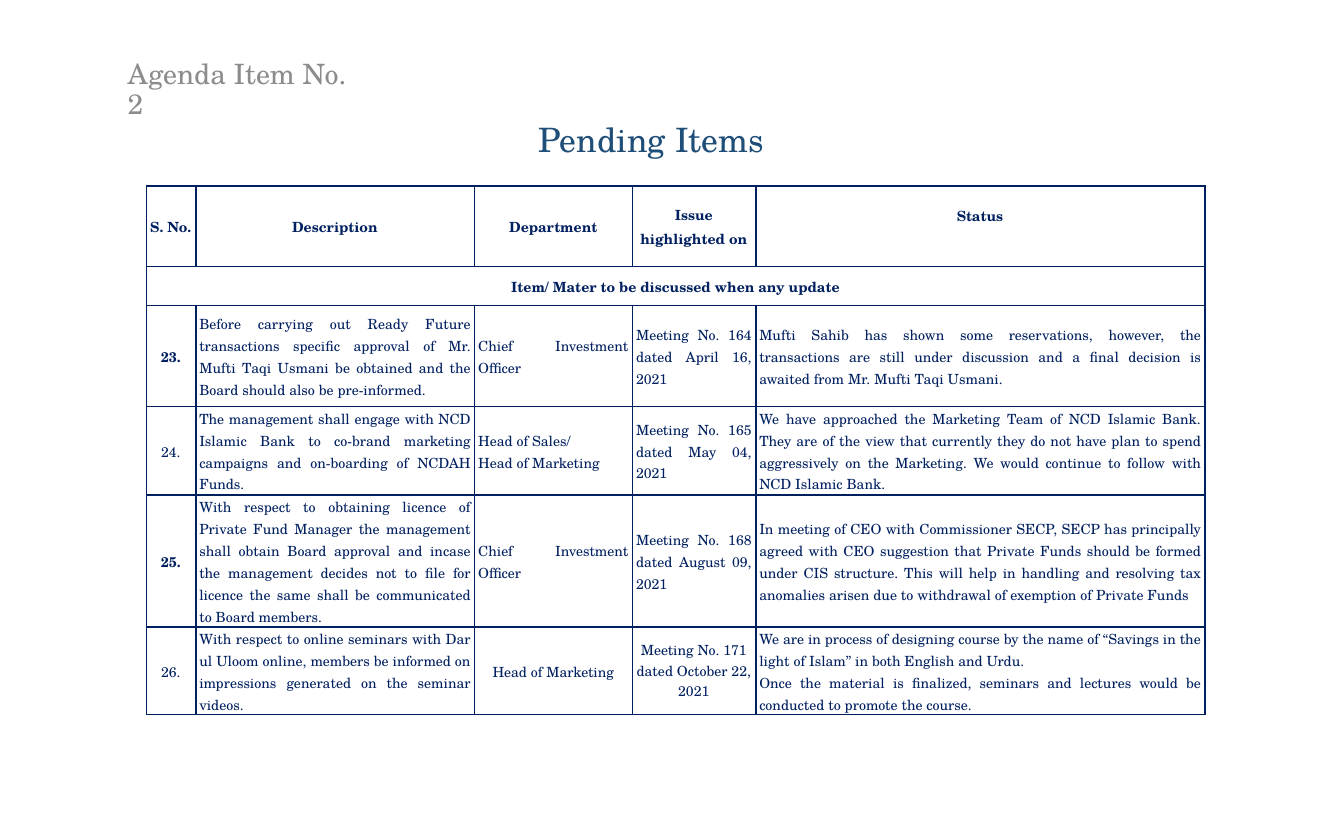
from dataclasses import dataclass

from lxml import etree
from pptx import Presentation
from pptx.dml.color import RGBColor
from pptx.enum.text import MSO_ANCHOR, PP_ALIGN
from pptx.oxml.ns import qn
from pptx.util import Inches, Pt

LEFT, CENTER, JUSTIFY = PP_ALIGN.LEFT, PP_ALIGN.CENTER, PP_ALIGN.JUSTIFY
TOP, MIDDLE = MSO_ANCHOR.TOP, MSO_ANCHOR.MIDDLE


@dataclass(frozen=True)
class Theme:
    font: str = "TeX Gyre Schola"
    agenda_color: str = "8C8C8C"
    title_color: str = "1F4E79"
    table_color: str = "002060"
    cell_fill: str = "FFFFFF"
    agenda_size: float = 18
    title_size: float = 21.6
    table_size: float = 9
    border_width: float = 1
    heading_spacing: float = 0.9
    cell_spacing: float = 1.07


COLUMN_WIDTHS = [0.44, 2.49, 1.41, 1.1, 4.01]
ROW_HEIGHTS = [0.72, 0.35, 0.9, 0.79, 1.18, 0.78]
HEADERS = ["S. No.", "Description", "Department", "Issue highlighted on", "Status"]
SECTION = "Item/ Mater to be discussed when any update"
ITEMS = [
    ["23.",
     "Before carrying out Ready Future transactions specific approval of Mr. Mufti Taqi "
     "Usmani be obtained and the Board should also be pre-informed.",
     "Chief Investment Officer",
     "Meeting No. 164 dated April 16, 2021",
     "Mufti Sahib has shown some reservations, however, the transactions are still under "
     "discussion and a final decision is awaited from Mr. Mufti Taqi Usmani."],
    ["24.",
     "The management shall engage with NCD Islamic Bank to co-brand marketing campaigns "
     "and on-boarding of NCDAH Funds.",
     "Head of Sales/\nHead of Marketing",
     "Meeting No. 165 dated May 04, 2021",
     "We have approached the Marketing Team of NCD Islamic Bank. They are of the view that "
     "currently they do not have plan to spend aggressively on the Marketing. We would "
     "continue to follow with NCD Islamic Bank."],
    ["25.",
     "With respect to obtaining licence of Private Fund Manager the management shall obtain "
     "Board approval and incase the management decides not to file for licence the same "
     "shall be communicated to Board members.",
     "Chief Investment Officer",
     "Meeting No. 168 dated August 09, 2021",
     "In meeting of CEO with Commissioner SECP, SECP has principally agreed with CEO "
     "suggestion that Private Funds should be formed under CIS structure. This will help in "
     "handling and resolving tax anomalies arisen due to withdrawal of exemption of Private "
     "Funds"],
    ["26.",
     "With respect to online seminars with Dar ul Uloom online, members be informed on "
     "impressions generated on the seminar videos.",
     "Head of Marketing",
     "Meeting No. 171 dated October 22, 2021",
     "We are in process of designing course by the name of “Savings in the light of Islam” "
     "in both English and Urdu.\nOnce the material is finalized, seminars and lectures would "
     "be conducted to promote the course."],
]
BOLD_NUMBERS = {"23.", "25."}


class PageBuilder:
    def __init__(self, page, theme):
        self.page = page
        self.theme = theme

    def format_text(self, frame, size, color, align, spacing, bold=False):
        for para in frame.paragraphs:
            para.alignment = align
            para.line_spacing = spacing
            for span in para.runs:
                span.font.name = self.theme.font
                span.font.size = Pt(size)
                span.font.bold = bold
                span.font.color.rgb = RGBColor.from_string(color)

    def heading(self, text, left, top, width, height, size, color, align, anchor):
        box = self.page.shapes.add_textbox(
            Inches(left), Inches(top), Inches(width), Inches(height))
        frame = box.text_frame
        frame.word_wrap = True
        frame.vertical_anchor = anchor
        frame.text = text
        self.format_text(frame, size, color, align, self.theme.heading_spacing)

    def table(self, left, top, widths, heights):
        frame = self.page.shapes.add_table(
            len(heights), len(widths), Inches(left), Inches(top),
            Inches(sum(widths)), Inches(sum(heights)))
        table = frame.table
        table.first_row = False
        table.horz_banding = False
        for column, width in zip(table.columns, widths):
            column.width = Inches(width)
        for row, height in zip(table.rows, heights):
            row.height = Inches(height)
        for cell in table.iter_cells():
            self.cell_frame(cell)
        return table

    def cell_frame(self, cell):
        cell.margin_left, cell.margin_right = Inches(0.03), Inches(0.04)
        cell.margin_top = cell.margin_bottom = 0
        cell.vertical_anchor = MIDDLE
        properties = cell._tc.get_or_add_tcPr()
        for side in ("lnL", "lnR", "lnT", "lnB"):
            line = etree.SubElement(properties, qn(f"a:{side}"),
                                    w=str(Pt(self.theme.border_width)))
            fill = etree.SubElement(line, qn("a:solidFill"))
            etree.SubElement(fill, qn("a:srgbClr"), val=self.theme.table_color)
        cell.fill.solid()
        cell.fill.fore_color.rgb = RGBColor.from_string(self.theme.cell_fill)

    def cell_text(self, cell, text, align, bold=False, spacing=None):
        cell.text_frame.text = text
        self.format_text(cell.text_frame, self.theme.table_size, self.theme.table_color,
                         align, spacing or self.theme.cell_spacing, bold)


def main():
    theme = Theme()
    deck = Presentation()
    deck.slide_width, deck.slide_height = Inches(12), Inches(7.5)
    builder = PageBuilder(deck.slides.add_slide(deck.slide_layouts[6]), theme)

    builder.heading("Agenda Item No. 2", 1.04, 0.56, 2.35, 0.5,
                    theme.agenda_size, theme.agenda_color, LEFT, MIDDLE)
    builder.heading("Pending Items", 3.07, 1.05, 5.49, 0.5,
                    theme.title_size, theme.title_color, CENTER, TOP)

    table = builder.table(1.31, 1.66, COLUMN_WIDTHS, ROW_HEIGHTS)
    for column, header in enumerate(HEADERS):
        builder.cell_text(table.cell(0, column), header, CENTER, bold=True)
    table.cell(0, len(HEADERS) - 1).margin_bottom = Inches(0.2)

    section = table.cell(1, 0)
    section.merge(table.cell(1, len(HEADERS) - 1))
    builder.cell_text(section, SECTION, CENTER, bold=True)

    for row, item in enumerate(ITEMS, start=2):
        is_last = item is ITEMS[-1]
        for column, text in enumerate(item):
            centered = column == 0 or (is_last and column in (2, 3))
            builder.cell_text(table.cell(row, column), text,
                              CENTER if centered else JUSTIFY,
                              bold=text in BOLD_NUMBERS,
                              spacing=1.0 if is_last and column == 3 else None)

    deck.save("out.pptx")


if __name__ == "__main__":
    main()
